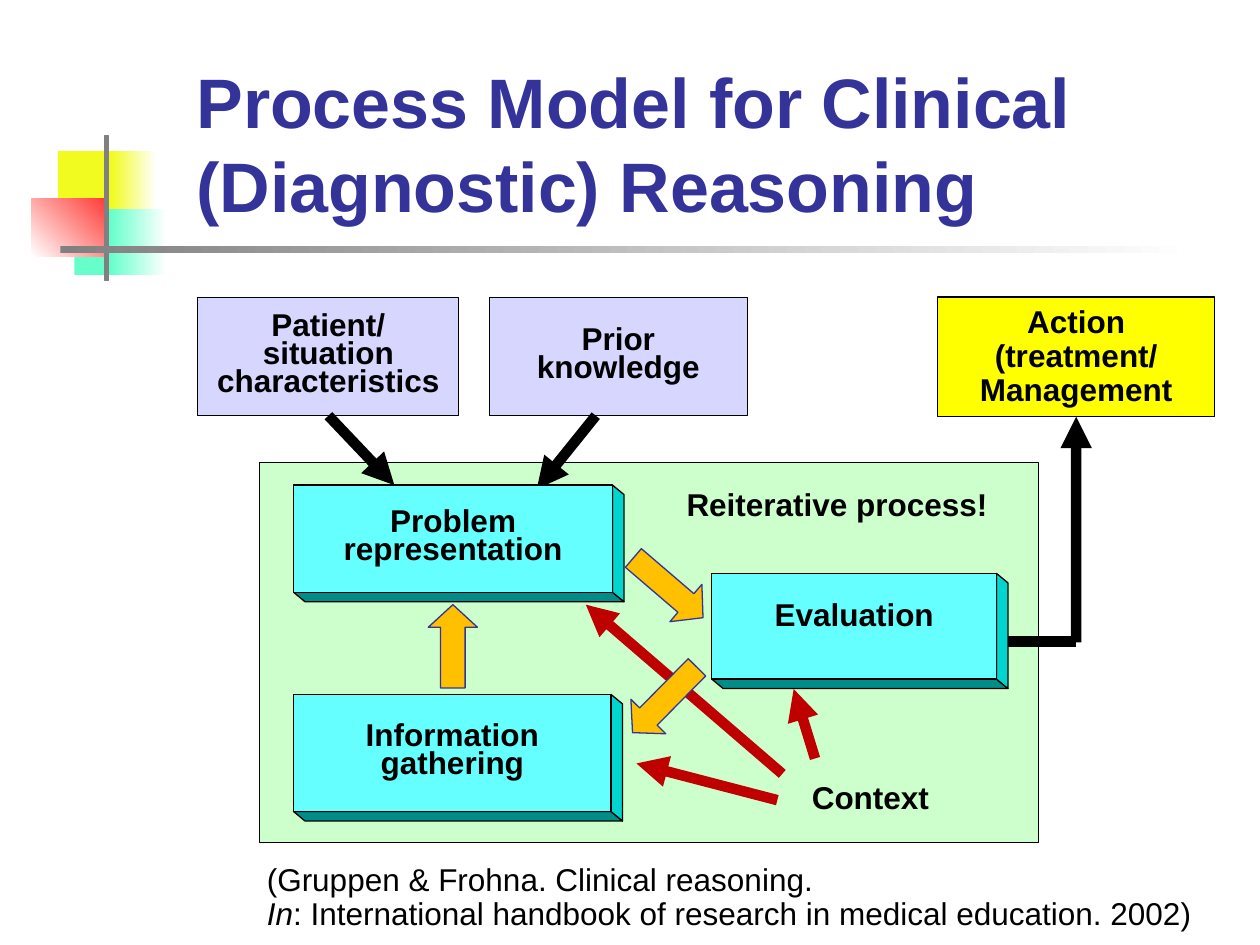
from lxml import etree
from pptx import Presentation
from pptx.dml.color import RGBColor
from pptx.enum import shapes, text
from pptx.oxml.ns import qn
from pptx.util import Cm, Pt

BLACK = RGBColor(0x00, 0x00, 0x00)
WHITE = RGBColor(0xFF, 0xFF, 0xFF)
GREY = RGBColor(0x80, 0x80, 0x80)
NAVY = RGBColor(0x33, 0x33, 0x99)
YELLOW = RGBColor(0xFF, 0xFF, 0x00)
LEMON = RGBColor(0xF1, 0xFB, 0x1F)
MINT = RGBColor(0x66, 0xFF, 0xCC)
RED = RGBColor(0xFE, 0x39, 0x34)
DARK_RED = RGBColor(0xBF, 0x00, 0x00)
PALE_GREEN = RGBColor(0xCC, 0xFF, 0xCC)
LILAC = RGBColor(0xD6, 0xD6, 0xFF)
CYAN = RGBColor(0x66, 0xFF, 0xFF)
TEAL = RGBColor(0x00, 0x8D, 0x8A)
TURQUOISE = RGBColor(0x00, 0xD5, 0xD0)
ORANGE = RGBColor(0xFF, 0xC0, 0x00)

PRESET = shapes.MSO_SHAPE


def add_shape(page, box, fill, line=None, weight=0.75, preset=PRESET.RECTANGLE):
    shape = page.shapes.add_shape(preset, *map(Cm, box))
    shape.shadow.inherit = False
    shape.fill.solid()
    shape.fill.fore_color.rgb = fill
    if line is None:
        shape.line.fill.background()
    else:
        shape.line.color.rgb = line
        shape.line.width = Pt(weight)
    return shape


def add_fade(page, box, start, end, angle=0, hold=0):
    shape = add_shape(page, box, start)
    shape.fill.gradient()
    shape.fill.gradient_angle = angle
    first, last = shape.fill.gradient_stops
    first.color.rgb, first.position = start, hold
    last.color.rgb, last.position = end, 1


def write(shape, words, size=18, bold=True, colour=BLACK, spacing=None,
          align=text.PP_ALIGN.CENTER, anchor=text.MSO_ANCHOR.MIDDLE):
    frame = shape.text_frame
    frame.text = words
    frame.word_wrap = True
    frame.vertical_anchor = anchor
    for para in frame.paragraphs:
        para.alignment = align
        para.line_spacing = spacing
        for span in para.runs:
            span.font.name = "Arial"
            span.font.size = Pt(size)
            span.font.bold = bold
            span.font.color.rgb = colour
    return frame


def add_label(page, box, words, **style):
    label = page.shapes.add_textbox(*map(Cm, box))
    style = {"align": text.PP_ALIGN.LEFT, "anchor": text.MSO_ANCHOR.TOP, **style}
    return write(label, words, **style)


def add_line(page, start, end, colour=BLACK, arrow=True):
    line = page.shapes.add_connector(
        shapes.MSO_CONNECTOR.STRAIGHT, *map(Cm, (*start, *end)))
    line.line.color.rgb = colour
    line.line.width = Pt(6)
    if arrow:
        etree.SubElement(line.line._get_or_add_ln(), qn("a:tailEnd"), type="triangle")
    etree.SubElement(line._element.spPr, qn("a:effectLst"))
    return line


def add_raised_box(page, box, words, spacing=16):
    left, top, width, height = box
    depth, drop = 0.23, 0.19
    base = add_shape(page, (left, top + height, width + depth, drop),
                     TEAL, BLACK, preset=PRESET.PARALLELOGRAM)
    base.adjustments[0] = depth / drop
    base.rotation = 180
    base._element.spPr.xfrm.set("flipH", "1")

    length = height + drop
    side = add_shape(page, (left + width + (depth - length) / 2,
                            top + (length - depth) / 2, length, depth),
                     TURQUOISE, BLACK, preset=PRESET.PARALLELOGRAM)
    side.adjustments[0] = drop / depth
    side.rotation = 270

    face = add_shape(page, box, CYAN, BLACK)
    write(face, words, spacing=Pt(spacing))


def add_block_arrow(page, centre, length, turn):
    width = 0.99
    arrow = add_shape(page, (centre[0] - width / 2, centre[1] - length / 2, width, length),
                      ORANGE, NAVY, preset=PRESET.UP_ARROW)
    arrow.adjustments[0] = 0.5
    arrow.adjustments[1] = 0.46
    arrow.rotation = turn


def draw_ornament(page, left, top):
    add_shape(page, (left + 0.53, top + 0.31, 1.22, 1.32), LEMON)
    add_fade(page, (left + 1.6, top + 0.31, 0.91, 1.32), LEMON, WHITE)
    add_fade(page, (left + 0.86, top + 1.48, 1.85, 1.32), MINT, WHITE, hold=0.39)
    add_fade(page, (left, top + 1.27, 1.55, 1.17), WHITE, RED, angle=45)
    add_shape(page, (left + 1.47, top, 0.08, 2.92), GREY, GREY)
    add_fade(page, (left + 0.58, top + 2.21, 22.86, 0.15), GREY, WHITE)


def draw_panel(page, box):
    panel = add_shape(page, box, PALE_GREEN, BLACK)
    frame = write(panel, "Context", align=text.PP_ALIGN.RIGHT,
                  anchor=text.MSO_ANCHOR.BOTTOM)
    frame.margin_right = Cm(2.2)
    frame.margin_bottom = Cm(0.55)


def draw_inputs(page, left, top):
    height = 2.39
    patient = add_shape(page, (left, top, 5.26, height), LILAC, BLACK, 0.5)
    write(patient, "Patient/\nsituation characteristics", spacing=Pt(16))
    prior = add_shape(page, (left + 5.87, top, 5.21, height), LILAC, BLACK, 0.5)
    write(prior, "Prior knowledge", spacing=Pt(16))
    bottom = top + height
    arrow = add_line(page, (left + 2.63, bottom), (left + 3.96, bottom + 1.4))
    arrow.begin_connect(patient, 2)
    add_line(page, (left + 8.02, bottom), (left + 6.83, bottom + 1.48))


def draw_cycle(page, left, top):
    context_arrows = [((11.2, 5.97), (10.77, 4.57)),
                      ((10.54, 6.28), (6.58, 2.87)),
                      ((10.44, 6.81), (7.6, 6.07))]
    for start, end in context_arrows:
        add_line(page, (left + start[0], top + start[1]),
                 (left + end[0], top + end[1]), DARK_RED)
    add_raised_box(page, (left + 0.69, top + 0.46, 6.43, 2.16), "Problem representation")
    add_raised_box(page, (left + 0.69, top + 4.68, 6.4, 2.36), "Information gathering")
    add_raised_box(page, (left + 9.12, top + 2.24, 5.74, 2.13), "Evaluation", 7)
    add_label(page, (left + 8.36, top + 0.46, 7.16, 0.89),
              "Reiterative process!", spacing=Pt(18))
    for x, y, length, turn in [(8.17, 4.79, 1.85, 224.6),
                               (8.24, 2.53, 1.85, 130.6),
                               (3.9, 3.71, 1.68, 0)]:
        add_block_arrow(page, (left + x, top + y), length, turn)


def draw_action(page, box):
    left, top, width, height = box
    action = add_shape(page, box, YELLOW, BLACK)
    write(action, "Action\n(treatment/\nManagement", spacing=0.9)
    middle, level = left + width / 2, top + 6.94
    add_line(page, (middle - 1.37, level), (middle, level), arrow=False)
    rise = add_line(page, (middle, level + 0.02), (middle, top + height))
    rise.end_connect(action, 2)


def draw_citation(page, box):
    frame = add_label(page, box, "(Gruppen & Frohna. Clinical reasoning.\nIn",
                      bold=False, spacing=0.9)
    para = frame.paragraphs[1]
    para.runs[0].font.italic = True
    span = para.add_run()
    span.text = ": International handbook of research in medical education. 2002)"
    span.font.name = "Arial"
    span.font.size = Pt(18)
    span.font.color.rgb = BLACK


def main():
    deck = Presentation()
    deck.slide_width, deck.slide_height = Cm(25.4), Cm(19.05)
    page = deck.slides.add_slide(deck.slide_layouts[6])
    draw_ornament(page, 0.64, 2.74)
    add_label(page, (3.71, 0.53, 21.69, 4.17),
              "Process Model for Clinical (Diagnostic) Reasoning",
              size=40, colour=NAVY, anchor=text.MSO_ANCHOR.BOTTOM)
    draw_panel(page, (5.23, 9.32, 15.7, 7.67))
    draw_inputs(page, 3.99, 5.99)
    draw_cycle(page, 5.23, 9.32)
    draw_action(page, (18.9, 5.99, 5.59, 2.41))
    draw_citation(page, (5.13, 17.3, 20.14, 1.65))
    deck.save("out.pptx")


if __name__ == "__main__":
    main()
